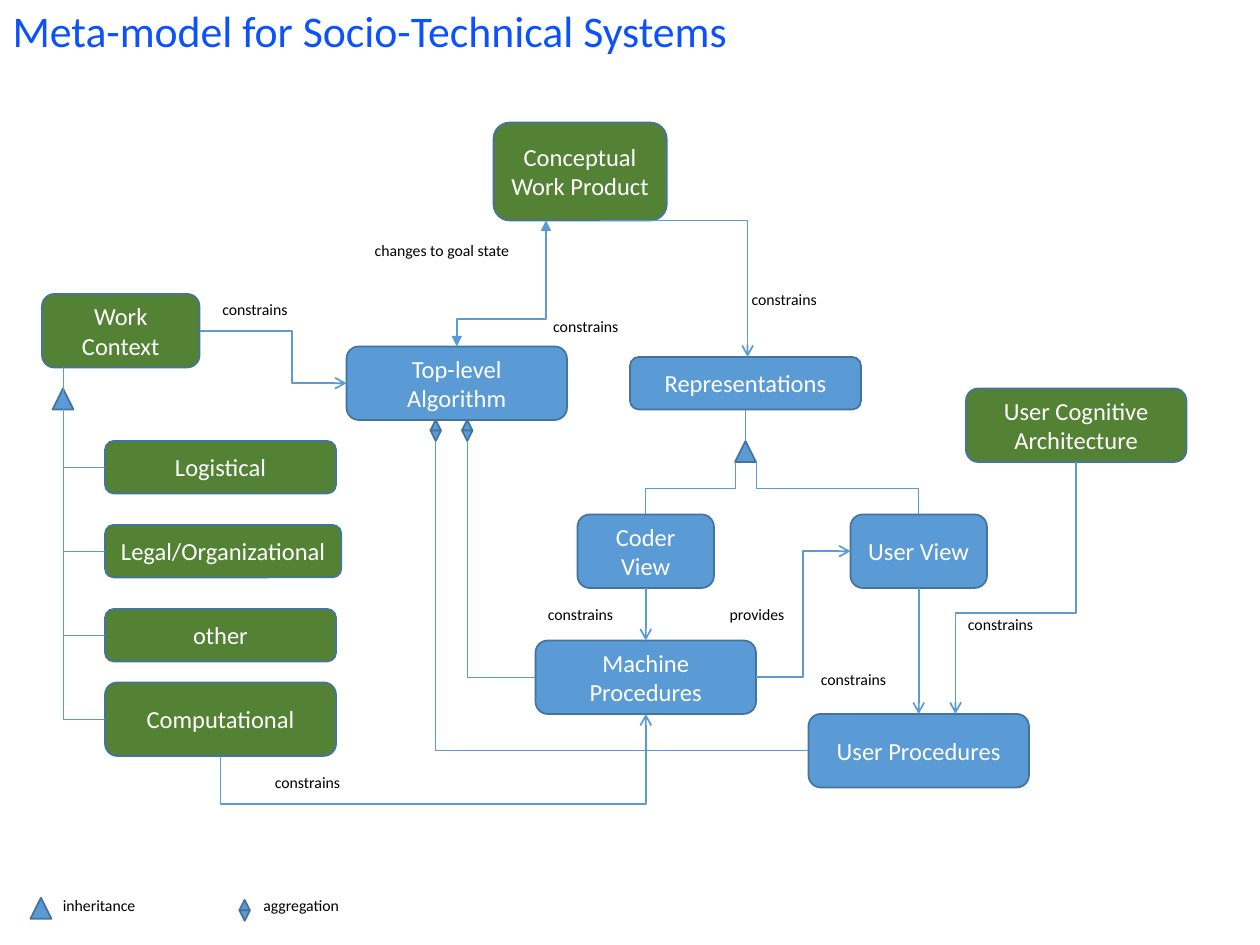
from lxml import etree
from pptx import Presentation, util as u
from pptx.dml.color import RGBColor
from pptx.enum import shapes, text
from pptx.oxml.ns import qn

COLS, ROWS = 120, 90  # grid of 1/12 inch cells
GREEN, BLUE, EDGE, WHITE, BLACK = "548235", "5B9BD5", "43739E", "FFFFFF", "000000"
TITLE, TITLE_COLOR = "Meta-model for Socio-Technical Systems", "0B52FC"

# name: (column, row, columns wide, rows high, fill)
BOXES = {
    "Conceptual Work Product": (47, 11.67, 16.5, 9.33, GREEN),
    "User Cognitive Architecture": (92, 37, 21, 7, GREEN),
    "Work Context": (4, 28, 15, 7, GREEN),
    "Logistical": (10, 42, 22, 5, GREEN),
    "Legal/Organizational": (10, 50, 22.5, 5, GREEN),
    "other": (10, 58, 22, 5, GREEN),
    "Computational": (10, 65, 22, 7, GREEN),
    "Top-level Algorithm": (33, 33, 21, 7, BLUE),
    "Representations": (60, 34, 22, 5, BLUE),
    "Coder View": (55, 49, 13, 7, BLUE),
    "User View": (81, 49, 13, 7, BLUE),
    "Machine Procedures": (51, 61, 21, 7, BLUE),
    "User Procedures": (77, 68, 21, 7, BLUE),
}
INHERITANCE_MARKS = [(2.9, 85.5), (5, 37), (70, 42)]
AGGREGATION_MARKS = [(22.8, 85.7), (41, 40), (44, 40)]

# (route, from, to, share of the way to the bend, width, head, tail)
# An end is a (box, side) pair or a (column, row) point.
LINKS = [
    ("vertical", ("User Cognitive Architecture", "bottom"), (91, 68), 0.6, 1, None, "arrow"),
    ("corner", (57.1, 21), (71.2, 34), None, 1, None, "arrow"),
    ("horizontal", ("Work Context", "right"), ("Top-level Algorithm", "left"), 0.63, 1, None, "arrow"),
    ("horizontal", ("Machine Procedures", "right"), ("User View", "left"), 0.5, 1, None, "arrow"),
    ("straight", ("User View", "bottom"), ("User Procedures", "top"), None, 1, None, "arrow"),
    ("straight", ("Coder View", "bottom"), ("Machine Procedures", "top"), None, 1, None, "arrow"),
    ("vertical", ("Computational", "bottom"), ("Machine Procedures", "bottom"), -1.14, 1, None, "arrow"),
    ("vertical", ("Top-level Algorithm", "top"), (52, 21), 0.22, 1, "triangle", "triangle"),
    ("straight", ("Representations", "bottom"), (71, 42), None, 0.5, None, None),
    ("vertical", (70, 44), ("Coder View", "top"), 0.5, 0.5, None, None),
    ("vertical", (72, 44), ("User View", "top"), 0.5, 0.5, None, None),
    ("corner", ("Machine Procedures", "left"), (44.5, 42), None, 0.5, None, None),
    ("corner", ("User Procedures", "left"), (41.5, 42), None, 0.5, None, None),
] + [("corner", (kind, "left"), (6, 35), None, 0.5, None, None)
     for kind in ("Logistical", "Legal/Organizational", "other", "Computational")]

# (text, column, row, columns wide)
LABELS = [
    ("changes to goal state", 34.5, 22.3, 18),
    ("constrains", 70.4, 27, 10),
    ("constrains", 20, 28, 10.8),
    ("constrains", 51.5, 29.6, 10),
    ("constrains", 51, 57, 10),
    ("provides", 68.3, 57, 8.8),
    ("constrains", 91, 58, 10),
    ("constrains", 77, 63.2, 10),
    ("constrains", 25, 73, 10.8),
    ("inheritance", 4.8, 84.7, 15),
    ("aggregation", 23.9, 84.7, 15),
]


def rgb(value):
    return RGBColor.from_string(value)


def cells(*values):
    return [u.Inches(v / 12) for v in values]


def write(shape, words, size, color, align):
    tf = shape.text_frame
    tf.word_wrap = True
    p = tf.paragraphs[0]
    p.text, p.alignment = words, align
    p.font.name, p.font.size, p.font.color.rgb = "Calibri", u.Pt(size), rgb(color)
    return tf


def add_solid(s, preset, x, y, w, h, fill):
    sp = s.shapes.add_shape(preset, *cells(x, y, w, h))
    sp.shadow.inherit = False
    sp.fill.solid()
    sp.fill.fore_color.rgb = rgb(fill)
    sp.line.color.rgb = rgb(EDGE)
    sp.line.width = u.Pt(1)
    return sp


def locate(end):
    """Turn a (box, side) pair into a grid point; pass points through."""
    if end[0] not in BOXES:
        return end
    x, y, w, h, _ = BOXES[end[0]]
    return {"left": (x, y + h / 2), "right": (x + w, y + h / 2),
            "top": (x + w / 2, y), "bottom": (x + w / 2, y + h)}[end[1]]


def add_link(s, route, start, end, bend, width, head, tail):
    (x1, y1), (x2, y2) = locate(start), locate(end)
    if route == "vertical":  # an elbow leaves sideways, so lay it out a quarter turn back
        cx, cy, dx, dy = (x1 + x2) / 2, (y1 + y2) / 2, x2 - x1, y2 - y1
        x1, y1, x2, y2 = cx - dy / 2, cy + dx / 2, cx + dy / 2, cy - dx / 2
    kind = shapes.MSO_CONNECTOR.STRAIGHT if route == "straight" else shapes.MSO_CONNECTOR.ELBOW
    link = s.shapes.add_connector(kind, *cells(x1, y1, x2, y2))
    link.line.width = u.Pt(width)
    link.line.color.rgb = rgb(BLUE)
    props = link.element.spPr
    geometry = props.find(qn("a:prstGeom"))
    if route == "vertical":
        props.find(qn("a:xfrm")).set("rot", str(90 * 60000))
    if route == "corner":
        geometry.set("prst", "bentConnector2")
    if bend is not None:
        etree.SubElement(geometry.find(qn("a:avLst")), qn("a:gd"),
                         name="adj1", fmla=f"val {round(bend * 100000)}")
    for tag, style in (("a:headEnd", head), ("a:tailEnd", tail)):
        if style:
            etree.SubElement(props.find(qn("a:ln")), qn(tag), type=style)
    etree.SubElement(props, qn("a:effectLst"))


def main():
    prs = Presentation()
    prs.slide_width, prs.slide_height = cells(COLS, ROWS)
    s = prs.slides.add_slide(prs.slide_layouts[5])

    title = s.shapes.title
    title.left, title.top, title.width, title.height = cells(0, 0, 108, 6.4)
    tf = write(title, TITLE, 25, TITLE_COLOR, text.PP_ALIGN.LEFT)
    tf.auto_size = text.MSO_AUTO_SIZE.NONE
    tf.vertical_anchor = text.MSO_ANCHOR.MIDDLE
    tf.paragraphs[0].line_spacing = 0.9

    for name, (*place, fill) in BOXES.items():
        box = add_solid(s, shapes.MSO_SHAPE.ROUNDED_RECTANGLE, *place, fill)
        tf = write(box, name, 14, WHITE, text.PP_ALIGN.CENTER)
        tf.vertical_anchor = text.MSO_ANCHOR.MIDDLE

    triangle = shapes.MSO_SHAPE.ISOSCELES_TRIANGLE
    for x, y in INHERITANCE_MARKS:
        add_solid(s, triangle, x, y, 2, 2, BLUE)
    for x, y in AGGREGATION_MARKS:
        add_solid(s, triangle, x, y, 1, 1, BLUE)
        add_solid(s, triangle, x, y + 1, 1, 1, BLUE).rotation = 180

    for link in LINKS:
        add_link(s, *link)
    for words, x, y, w in LABELS:
        write(s.shapes.add_textbox(*cells(x, y, w, 3)), words, 9, BLACK, text.PP_ALIGN.LEFT)

    prs.save("out.pptx")


if __name__ == "__main__":
    main()
